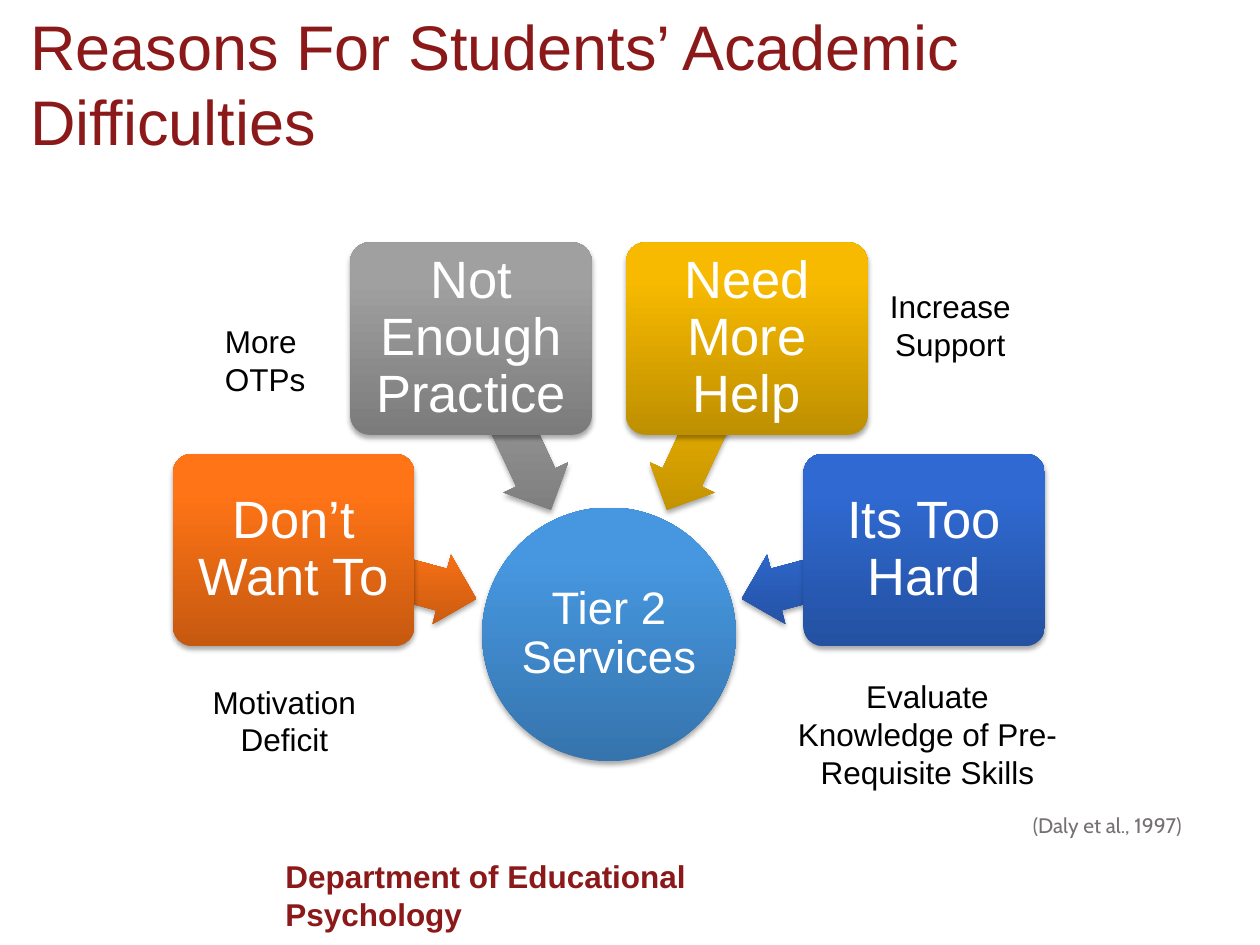
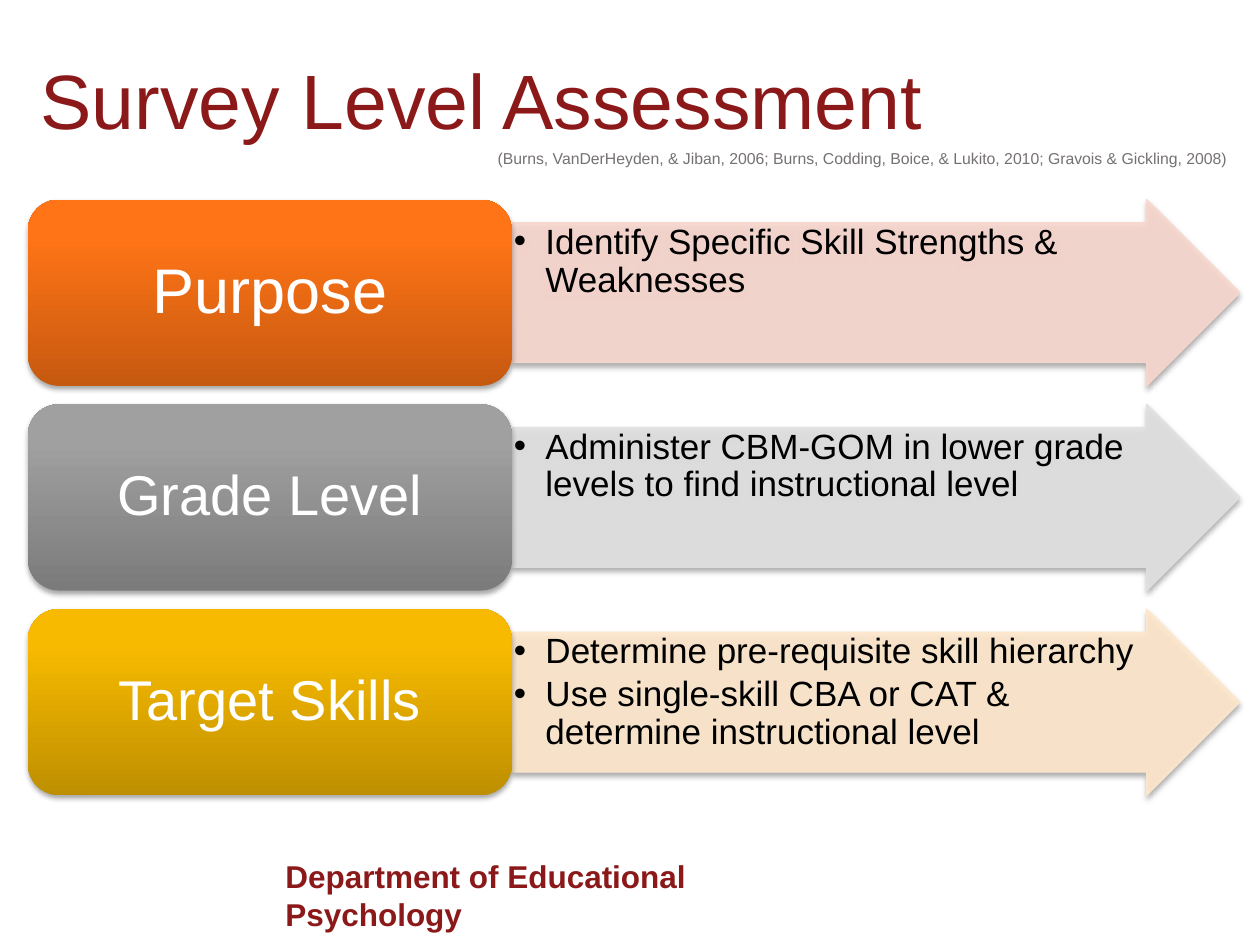
import math
import pptx
import pptx.util
import pptx.dml.color
import pptx.enum.shapes
import pptx.enum.text
from lxml import etree
from pptx.oxml.ns import qn

Pt = pptx.util.Pt
RGB = pptx.dml.color.RGBColor.from_string
SHAPE = pptx.enum.shapes.MSO_SHAPE
ALIGN = pptx.enum.text.PP_ALIGN
ANCHOR = pptx.enum.text.MSO_ANCHOR

# Content
FOOTER = "Department of Educational Psychology"
REASONS_TITLE = "Reasons For Students’ Academic Difficulties"
HUB = "Tier 2 Services"
REASONS = [  # label, colour, angle around the hub
    ("Don’t Want To", "orange", 195),
    ("Not Enough Practice", "gray", 245),
    ("Need More Help", "gold", 295),
    ("Its Too Hard", "blue", 345),
]
REMEDIES = [  # paragraphs, (left, top, width, height)
    (["Motivation", "Deficit"], (108.5, 386.5, 108, 51)),
    (["Increase Support"], (489, 160.5, 108, 51)),
    (["Evaluate Knowledge of Pre-Requisite Skills"], (444, 383.5, 172, 73)),
    (["More ", "OTPs"], (97.5, 180.5, 108, 51)),
]
REASONS_SOURCE = "(Daly et al., 1997)"

SURVEY_TITLE = "Survey Level Assessment"
SURVEY = [  # label, colour, label size, arrow tint, bullets
    ("Purpose", "orange", 36, "F8D7CE",
     ["Identify Specific Skill Strengths & Weaknesses"]),
    ("Grade Level", "gray", 32, "E1E1E1",
     ["Administer CBM-GOM in lower grade levels to find instructional level"]),
    ("Target Skills", "gold", 32, "FFE8CC",
     ["Determine pre-requisite skill hierarchy",
      "Use single-skill CBA or CAT & determine instructional level"]),
]
SURVEY_SOURCE = ("(Burns, VanDerHeyden, & Jiban, 2006; Burns, Codding, Boice, & Lukito, 2010; "
                 "Gravois & Gickling, 2008)")


class Theme:
    font, source_font = "Arial", "Cabin"
    maroon, black, white, source = "8C1919", "000000", "FFFFFF", "767171"
    gradients = {  # bottom, top
        "orange": ("C65910", "FF7416"),
        "gray": ("7B7B7B", "A0A0A0"),
        "gold": ("BE8F00", "F7BA00"),
        "blue": ("2451A1", "2F69D1"),
        "sky": ("3674AD", "4697E0"),
    }
    note, bullet, reason, hub = 18, 20, 30, 26


# Text helpers
def put_text(sp, paras, size, color, align=ALIGN.LEFT, anchor=ANCHOR.TOP, insets=None,
             font=Theme.font, bold=False, spacing=None, bullets=False):
    tf = sp.text_frame
    frame = {"word_wrap": True, "vertical_anchor": anchor,
             "auto_size": pptx.enum.text.MSO_AUTO_SIZE.NONE}
    if insets:
        sides = ("margin_left", "margin_top", "margin_right", "margin_bottom")
        frame.update(zip(sides, map(Pt, insets)))
    for name, value in frame.items():
        setattr(tf, name, value)
    for i, text in enumerate(paras):
        p = tf.add_paragraph() if i else tf.paragraphs[0]
        p.alignment, p.line_spacing = align, spacing
        if bullets:
            p.space_after = Pt(3)
            pPr = p._p.get_or_add_pPr()
            pPr.set("marL", str(Pt(18)))
            pPr.set("indent", str(-Pt(18)))
            etree.SubElement(pPr, qn("a:buFont")).set("typeface", "Arial")
            etree.SubElement(pPr, qn("a:buChar")).set("char", "•")
        r = p.add_run()
        r.text = text
        for name, value in {"name": font, "size": Pt(size), "bold": bold}.items():
            setattr(r.font, name, value)
        r.font.color.rgb = RGB(color)


def add_text(s, box, paras, size, color, **fmt):
    put_text(s.shapes.add_textbox(*map(Pt, box)), paras, size, color, **fmt)


# Shape helpers
def add_shape(s, kind, box, adjustments=()):
    sp = s.shapes.add_shape(kind, *map(Pt, box))
    for i, value in enumerate(adjustments):
        sp.adjustments[i] = value
    sp.line.fill.background()
    sp.shadow.inherit = False
    effects = sp._element.spPr.find(qn("a:effectLst"))
    shadow = etree.SubElement(effects, qn("a:outerShdw"), blurRad=str(Pt(3.1)),
                              dist=str(Pt(1.8)), dir="5400000", rotWithShape="0")
    black = etree.SubElement(shadow, qn("a:srgbClr"), val=Theme.black)
    etree.SubElement(black, qn("a:alpha"), val="35000")
    return sp


def shade(sp, color):
    fill = sp.fill
    fill.gradient()
    fill.gradient_angle = 90
    for stop, position, rgb in zip(fill.gradient_stops, (0, 0.8), Theme.gradients[color]):
        stop.position = position
        stop.color.rgb = RGB(rgb)
    sp._element.spPr.find(qn("a:gradFill")).set("rotWithShape", "0")


def tint(sp, color):
    sp.fill.solid()
    sp.line.fill.solid()
    sp.line.width = Pt(0.75)
    for fill in (sp.fill, sp.line.fill):
        fill.fore_color.rgb = RGB(color)
    for solid in sp._element.spPr.iter(qn("a:solidFill")):
        etree.SubElement(solid[0], qn("a:alpha"), val="90000")


def add_label(s, kind, box, color, text, size, insets, adjustments=()):
    sp = add_shape(s, kind, box, adjustments)
    shade(sp, color)
    put_text(sp, [text], size, Theme.white, align=ALIGN.CENTER, anchor=ANCHOR.MIDDLE,
             insets=insets, spacing=0.9)


def around(center, angle, distance, width, height):
    """Box whose middle lies at an angle and distance from a center."""
    x = center[0] + distance * math.cos(math.radians(angle))
    y = center[1] + distance * math.sin(math.radians(angle))
    return x - width / 2, y - height / 2, width, height


# Shared slide frame
def new_slide(prs, title, box, size):
    s = prs.slides.add_slide(prs.slide_layouts[5])
    sp = s.shapes.title
    for name, value in zip(("left", "top", "width", "height"), box):
        setattr(sp, name, Pt(value))
    put_text(sp, [title], size, Theme.maroon, anchor=ANCHOR.MIDDLE)
    add_text(s, (156, 486, 330, 29), [FOOTER], Theme.note, Theme.maroon, bold=True)
    return s


# Slide 1: reasons around a hub
def reasons_slide(prs):
    s = new_slide(prs, REASONS_TITLE, (10, 18, 649.5, 58.5), 36)
    center = (348, 362.5)
    add_label(s, SHAPE.OVAL, around(center, 0, 0, 145, 145), "sky", HUB, Theme.hub, [0] * 4)
    for label, color, angle in REASONS:
        arrow = add_shape(s, SHAPE.LEFT_ARROW, around(center, angle, 132.5, 108, 41), (0.6, 0.5))
        arrow.rotation = angle
        shade(arrow, color)
        add_label(s, SHAPE.ROUNDED_RECTANGLE, around(center, angle, 186.5, 138, 110),
                  color, label, Theme.reason, [4.5] * 4, (0.1,))
    for paras, box in REMEDIES:
        add_text(s, box, paras, Theme.note, Theme.black, align=ALIGN.CENTER)
    add_text(s, (174, 461, 508.5, 22), [REASONS_SOURCE], 12, Theme.source,
             align=ALIGN.RIGHT, font=Theme.source_font)


# Slide 2: rows of label and arrow
def survey_slide(prs):
    s = new_slide(prs, SURVEY_TITLE, (16, 9.5, 540, 93.5), 44)
    top, pitch, height = 114, 117, 106.5
    for i, (label, color, size, arrow_tint, bullets) in enumerate(SURVEY):
        y = top + i * pitch
        arrow = add_shape(s, SHAPE.RIGHT_ARROW, (293, y, 415.5, height), (0.75, 0.5))
        tint(arrow, arrow_tint)
        put_text(arrow, bullets, Theme.bullet, Theme.black, insets=[0.75] * 4,
                 spacing=0.9, bullets=True)
        add_label(s, SHAPE.ROUNDED_RECTANGLE, (16, y, 276.5, height), color, label, size,
                  (10, 5, 10, 5))
    add_text(s, (264, 81.5, 444, 18), [SURVEY_SOURCE], 9, Theme.source, align=ALIGN.RIGHT)


def main():
    prs = pptx.Presentation()
    prs.slide_width, prs.slide_height = Pt(720), Pt(540)
    reasons_slide(prs)
    survey_slide(prs)
    prs.save("out.pptx")


if __name__ == "__main__":
    main()
